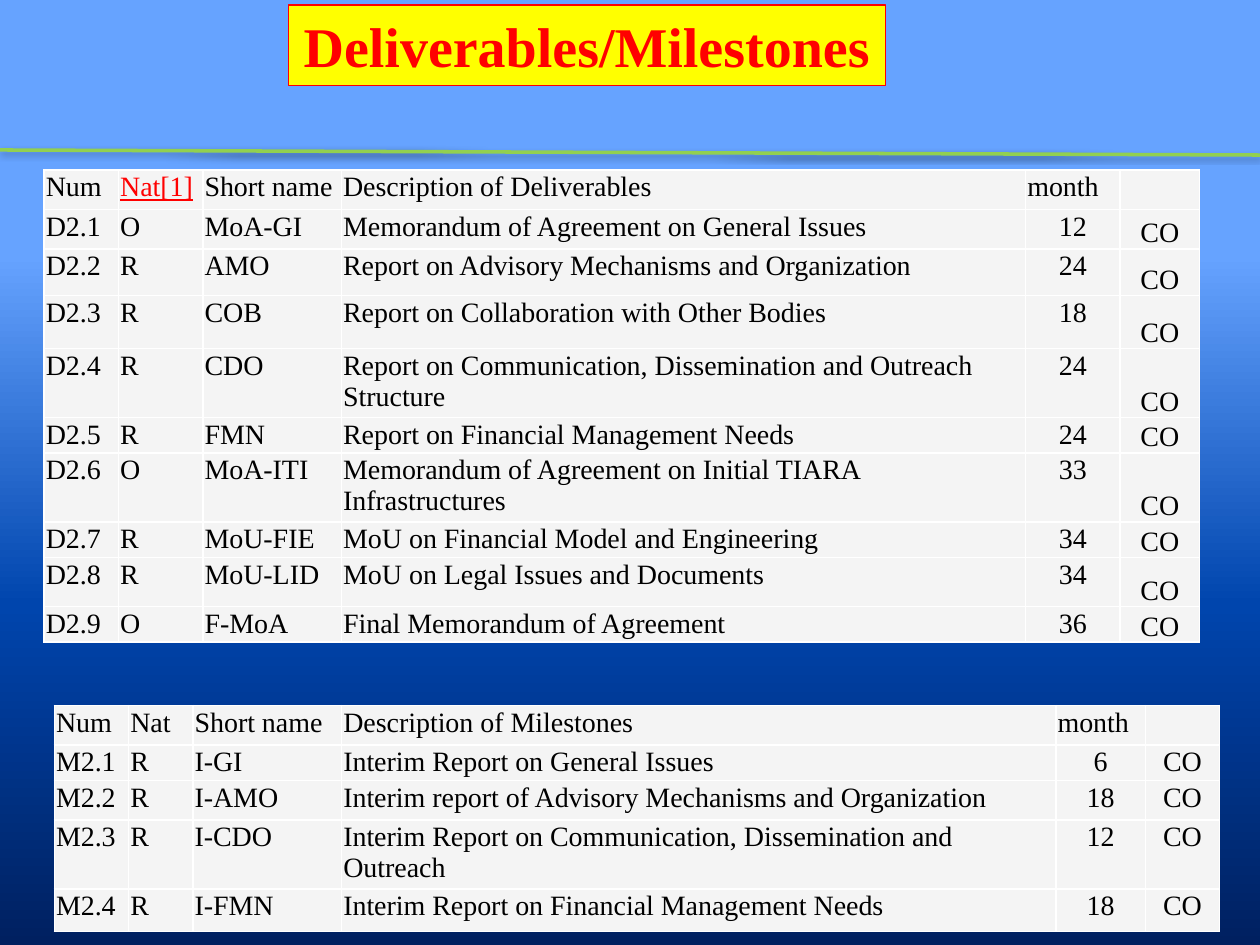
"""Build the slide listing project deliverables and milestones."""
from copy import deepcopy
from dataclasses import dataclass

from lxml import etree
from pptx import Presentation
from pptx.dml.color import RGBColor
from pptx.enum.shapes import MSO_CONNECTOR, MSO_SHAPE
from pptx.enum.text import MSO_ANCHOR, MSO_AUTO_SIZE, PP_ALIGN
from pptx.oxml import parse_xml
from pptx.oxml.ns import nsdecls, qn
from pptx.util import Pt

STRAIGHT = MSO_CONNECTOR.STRAIGHT
RECT = MSO_SHAPE.RECTANGLE
TOP, MIDDLE, BOTTOM = MSO_ANCHOR.TOP, MSO_ANCHOR.MIDDLE, MSO_ANCHOR.BOTTOM
LEFT, CENTER = PP_ALIGN.LEFT, PP_ALIGN.CENTER
FIT_SHAPE = MSO_AUTO_SIZE.SHAPE_TO_FIT_TEXT


@dataclass(frozen=True)
class Theme:
    font: str = "Times New Roman"
    title_size: float = 32
    body_size: float = 16
    text: str = "000000"
    accent: str = "FF0000"
    title_fill: str = "FFFF00"
    cell_fill: str = "F4F4F4"
    border: str = "FFFFFF"
    rule: str = "92D050"
    shadow: str = "000000"
    background: tuple = ((0.27, "66A3FF"), (0.64, "0045AD"), (1, "002060"))


THEME = Theme()

DELIVERABLES = {
    "pos": (25.2, 97.2),
    "cols": (42.5, 48.2, 79.2, 391, 54, 45.4),
    "heights": (20, 22.5, 26.5, 30.5, 39, 20, 39, 20, 28, 20.5),
    "mark_anchor": BOTTOM,
    "accents": ("Nat[1]",),
    "rows": (
        ("Num", "Nat[1]", "Short name", "Description of Deliverables", "month", ""),
        ("D2.1", "O", "MoA-GI", "Memorandum of Agreement on General Issues", "12", "CO"),
        ("D2.2", "R", "AMO", "Report on Advisory Mechanisms and Organization", "24", "CO"),
        ("D2.3", "R", "COB", "Report on Collaboration with Other Bodies", "18", "CO"),
        ("D2.4", "R", "CDO",
         "Report on Communication, Dissemination and Outreach Structure", "24", "CO"),
        ("D2.5", "R", "FMN", "Report on Financial Management Needs", "24", "CO"),
        ("D2.6", "O", "MoA-ITI",
         "Memorandum of Agreement on Initial TIARA Infrastructures", "33", "CO"),
        ("D2.7", "R", "MoU-FIE", "MoU on Financial Model and Engineering", "34", "CO"),
        ("D2.8", "R", "MoU-LID", "MoU on Legal Issues and Documents", "34", "CO"),
        ("D2.9", "O", "F-MoA", "Final Memorandum of Agreement", "36", "CO"),
    ),
}

MILESTONES = {
    "pos": (31, 403.2),
    "cols": (42.5, 36.7, 85, 408.2, 51.1, 42.5),
    "heights": (20, 20, 22.5, 39, 24.5),
    "mark_anchor": TOP,
    "accents": (),
    "rows": (
        ("Num", "Nat", "Short name", "Description of Milestones", "month", ""),
        ("M2.1", "R", "I-GI", "Interim Report on General Issues", "6", "CO"),
        ("M2.2", "R", "I-AMO",
         "Interim report of Advisory Mechanisms and Organization", "18", "CO"),
        ("M2.3", "R", "I-CDO",
         "Interim Report on Communication, Dissemination and Outreach", "12", "CO"),
        ("M2.4", "R", "I-FMN", "Interim Report on Financial Management Needs", "18", "CO"),
    ),
}


def rgb(value):
    return RGBColor.from_string(value)


def set_attrs(obj, values):
    for name, value in values.items():
        setattr(obj, name, value)


def write(tf, text, size, color, align=LEFT, **font):
    p = tf.paragraphs[0]
    p.alignment = align
    r = p.add_run()
    r.text = text
    set_attrs(r.font, {"name": THEME.font, "size": Pt(size), **font})
    r.font.color.rgb = rgb(color)


def paint_background(s):
    fill = s.background.fill
    fill.gradient()
    fill.gradient_angle = 270
    stops = s.element.find(".//" + qn("a:gsLst"))
    stops.append(deepcopy(stops[-1]))
    for stop, (position, color) in zip(fill.gradient_stops, THEME.background):
        stop.position = position
        stop.color.rgb = rgb(color)


def add_rule(s, start, end):
    sp = s.shapes.add_connector(STRAIGHT, *map(Pt, start + end))
    sp.line.color.rgb = rgb(THEME.rule)
    sp.line.width = Pt(2)
    effects = etree.SubElement(sp.element.spPr, qn("a:effectLst"))
    shadow = etree.SubElement(effects, qn("a:outerShdw"), blurRad=str(Pt(3.1)),
                              dist=str(Pt(1.6)), dir="5400000", rotWithShape="0")
    color = etree.SubElement(shadow, qn("a:srgbClr"), val=THEME.shadow)
    etree.SubElement(color, qn("a:alpha"), val="38000")


def add_title(s, text, box):
    sp = s.shapes.add_shape(RECT, *map(Pt, box))
    sp.shadow.inherit = False
    sp.fill.solid()
    sp.fill.fore_color.rgb = rgb(THEME.title_fill)
    sp.line.color.rgb = rgb(THEME.accent)
    sp.line.width = Pt(0.75)
    tf = sp.text_frame
    set_attrs(tf, {"word_wrap": False, "auto_size": FIT_SHAPE, "vertical_anchor": MIDDLE})
    write(tf, text, THEME.title_size, THEME.accent, CENTER, bold=True)


def format_cell(cell, anchor):
    props = cell._tc.get_or_add_tcPr()
    for side in "LRTB":
        props.append(parse_xml(
            f'<a:ln{side} {nsdecls("a")} w="{Pt(1)}"><a:solidFill>'
            f'<a:srgbClr val="{THEME.border}"/></a:solidFill></a:ln{side}>'))
    cell.fill.solid()
    cell.fill.fore_color.rgb = rgb(THEME.cell_fill)
    set_attrs(cell, {"margin_left": Pt(1), "margin_right": Pt(1), "margin_top": Pt(1),
                     "margin_bottom": 0, "vertical_anchor": anchor})


def add_schedule(s, pos, cols, heights, mark_anchor, accents, rows):
    size = (sum(cols), sum(heights))
    table = s.shapes.add_table(len(rows), len(cols), *map(Pt, pos + size)).table
    set_attrs(table, {"first_row": False, "horz_banding": False})
    for column, width in zip(table.columns, cols):
        column.width = Pt(width)
    for row, height in zip(table.rows, heights):
        row.height = Pt(height)
    for i, values in enumerate(rows):
        for j, text in enumerate(values):
            cell = table.cell(i, j)
            format_cell(cell, mark_anchor if i and j == 5 else TOP)
            accent = text in accents
            write(cell.text_frame, text, THEME.body_size,
                  THEME.accent if accent else THEME.text,
                  CENTER if i and j >= 4 else LEFT, underline=accent)


def main():
    prs = Presentation()
    set_attrs(prs, {"slide_width": Pt(720), "slide_height": Pt(540)})
    s = prs.slides.add_slide(prs.slide_layouts[6])
    paint_background(s)
    add_rule(s, (720, 88.6), (0, 85.7))
    add_title(s, "Deliverables/Milestones", (164.9, 2.9, 341.3, 46.1))
    for schedule in (DELIVERABLES, MILESTONES):
        add_schedule(s, **schedule)
    prs.save("out.pptx")


if __name__ == "__main__":
    main()
